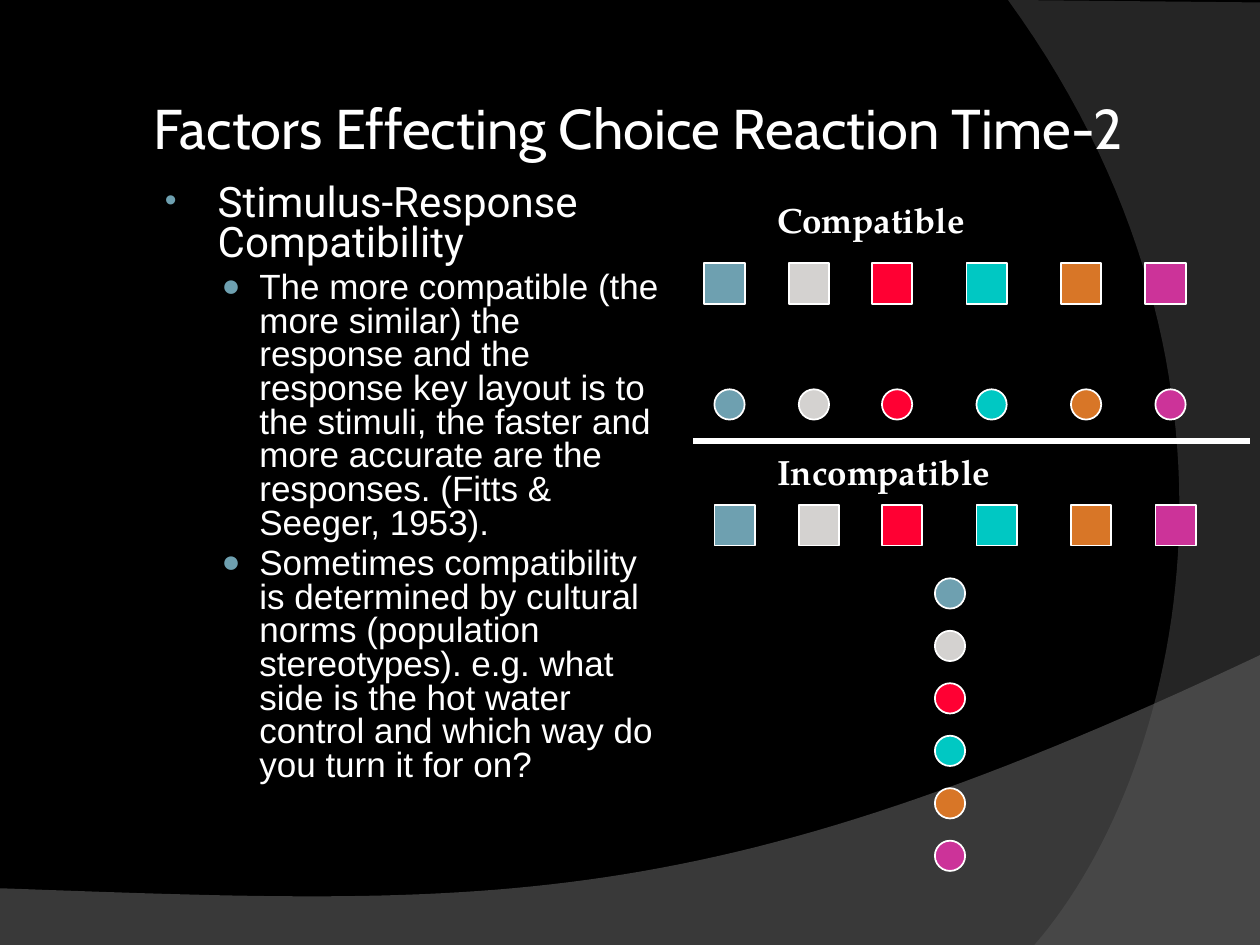
"""Build a slide on stimulus-response compatibility in choice reaction time."""
from lxml import etree
from pptx import Presentation
from pptx.dml.color import RGBColor
from pptx.enum.shapes import MSO_CONNECTOR, MSO_SHAPE
from pptx.enum.text import MSO_ANCHOR, PP_ALIGN
from pptx.oxml.ns import qn
from pptx.util import Inches, Pt

RECT, OVAL = MSO_SHAPE.RECTANGLE, MSO_SHAPE.OVAL
STRAIGHT = MSO_CONNECTOR.STRAIGHT
MIDDLE = MSO_ANCHOR.MIDDLE
LEFT, JUSTIFY = PP_ALIGN.LEFT, PP_ALIGN.JUSTIFY

COLORS = {
    "background": "000000", "text": "FFFFFF", "bullet": "6EA0B0",
    "low wave": "7F7F7F", "side wave": "5E5E5E",
}
STIMULI = ["6EA0B0", "D4D2D0", "FF0033", "00C8C3", "D87627", "CC3399"]
OFFSETS = [0, 0.67, 1.33, 2.08, 2.83, 3.5]


def rgb(name):
    return RGBColor.from_string(COLORS.get(name, name))


def style(paragraph, size, face, bold=False):
    paragraph.font.size = Pt(size)
    paragraph.font.name = face
    paragraph.font.bold = bold
    paragraph.font.color.rgb = rgb("text")


prs = Presentation()
prs.slide_width, prs.slide_height = Inches(10), Inches(7.5)
slide = prs.slides.add_slide(prs.slide_layouts[6])
slide.background.fill.solid()
slide.background.fill.fore_color.rgb = rgb("background")

waves = [
    ("low wave", 45, [(0, 7.05), (0, 7.5), (10, 7.5)],
     [(10, 5.2), (5.59, 7.29), (3.91, 7.19), (0, 7.05)]),
    ("side wave", 40, [(8, 0), (10, 0.02), (10, 7.5)],
     [(8.21, 7.5), (9.35, 6.19), (10.18, 3), (8, 0)]),
]
for name, opacity, corners, controls in waves:
    curve = []
    for step in range(61):
        t = step / 60
        weights = [(1 - t) ** 3, 3 * t * (1 - t) ** 2, 3 * t * t * (1 - t), t ** 3]
        curve.append([sum(w * point[axis] for w, point in zip(weights, controls))
                      for axis in (0, 1)])
    outline = [(Inches(x), Inches(y)) for x, y in corners + curve]
    builder = slide.shapes.build_freeform(*outline[0])
    builder.add_line_segments(outline[1:])
    wave = builder.convert_to_shape()
    wave.shadow.inherit = False
    wave.line.fill.background()
    wave.fill.solid()
    wave.fill.fore_color.rgb = rgb(name)
    tint = wave.fill._xPr.find(qn("a:solidFill"))[0]
    etree.SubElement(tint, qn("a:alpha"), val=str(opacity * 1000))

title = slide.shapes.add_textbox(Inches(1.17), Inches(0.67), Inches(8.5), Inches(0.67)).text_frame
title.word_wrap = True
title.vertical_anchor = MIDDLE
title.margin_left = title.margin_right = Inches(0.05)
title.text = "Factors Effecting Choice Reaction Time-2"
style(title.paragraphs[0], 32, "Cabin")

points = [
    ("Stimulus-Response Compatibility", 0, 24, "Roboto", JUSTIFY, 0.46, -0.42, "•", 80),
    ("The more compatible (the more similar) the response and the response key layout "
     "is to the stimuli, the faster and more accurate are the responses. "
     "(Fitts & Seeger, 1953).", 1, 20, "Arial", LEFT, 0.79, -0.3, "●", 90),
    ("Sometimes compatibility is determined by cultural norms (population stereotypes). "
     "e.g. what side is the hot water control and which way do you turn it for on?",
     1, 20, "Arial", LEFT, 0.79, -0.3, "●", 90),
]
body = slide.shapes.add_textbox(Inches(1.17), Inches(1.42), Inches(4.17), Inches(5.25)).text_frame
body.word_wrap = True
for index, (text, level, size, face, align, margin, indent, mark, scale) in enumerate(points):
    point = body.add_paragraph() if index else body.paragraphs[0]
    point.text = text
    point.level = level
    point.alignment = align
    props = point._p.get_or_add_pPr()
    props.set("marL", str(Inches(margin)))
    props.set("indent", str(Inches(indent)))
    bullet_color = etree.SubElement(props, qn("a:buClr"))
    etree.SubElement(bullet_color, qn("a:srgbClr"), val=COLORS["bullet"])
    etree.SubElement(props, qn("a:buSzPct"), val=str(scale * 1000))
    etree.SubElement(props, qn("a:buFont"), typeface="Arial")
    etree.SubElement(props, qn("a:buChar"), char=mark)
    point.line_spacing = 0.8
    point.space_before = Pt(0.2 * size if index else 0)
    style(point, size, face)

rows = [(RECT, 5.59, 2.09, 0.32), (OVAL, 5.67, 3.09, 0.24), (RECT, 5.67, 4.01, 0.32)]
marks = [(kind, left + offset, top, size, color)
         for kind, left, top, size in rows
         for offset, color in zip(OFFSETS, STIMULI)]
marks += [(OVAL, 7.42, 4.59 + 0.4165 * i, 0.24, color) for i, color in enumerate(STIMULI)]
for kind, left, top, size, color in marks:
    mark = slide.shapes.add_shape(kind, Inches(left), Inches(top), Inches(size), Inches(size))
    mark.shadow.inherit = False
    mark.fill.solid()
    mark.fill.fore_color.rgb = rgb(color)
    mark.line.color.rgb = rgb("text")
    mark.line.width = Pt(1)

for text, top, width in [("Compatible", 1.53, 1.7), ("Incompatible", 3.53, 1.9)]:
    heading = slide.shapes.add_textbox(Inches(6.07), Inches(top), Inches(width), Inches(0.43)).text_frame
    heading.word_wrap = False
    heading.text = text
    style(heading.paragraphs[0], 20, "TeX Gyre Pagella", bold=True)

divider = slide.shapes.add_connector(STRAIGHT, Inches(5.5), Inches(3.5), Inches(9.92), Inches(3.5))
divider.line.color.rgb = rgb("text")
divider.line.width = Pt(4)
etree.SubElement(divider._element.spPr, qn("a:effectLst"))

prs.save("out.pptx")
